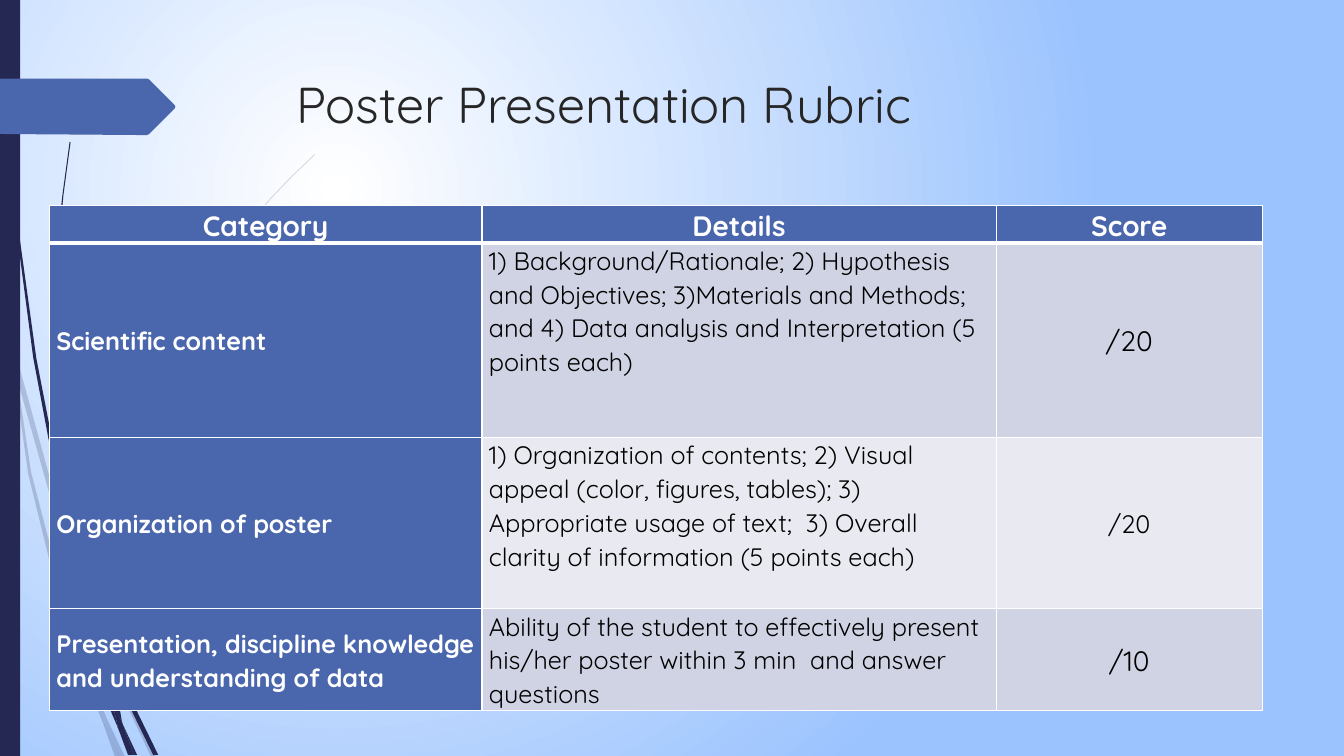
from dataclasses import dataclass

from lxml.etree import SubElement
from pptx import Presentation
from pptx.dml.color import RGBColor
from pptx.enum.shapes import MSO_SHAPE
from pptx.enum.text import MSO_ANCHOR as Anchor, PP_ALIGN as Align
from pptx.oxml.ns import qn
from pptx.util import Emu, Pt

PX = 9144
FONT = "Quicksand"
COLORS = {
    "navy": "242852",
    "blue": "4A66AC",
    "sky": "9BC3FE",
    "white": "FFFFFF",
    "black": "000000",
    "title": "262626",
    "band_dark": "D0D3E3",
    "band_light": "E9EAF1",
}

Points = list[tuple[int, int]]


@dataclass
class Outline:
    points: Points
    color: str = "navy"
    opacity: int = 100


@dataclass
class Entry:
    text: str
    fill: str
    color: str = "black"
    size: int = 18
    bold: bool = False
    align: Align = Align.LEFT
    anchor: Anchor = Anchor.MIDDLE


@dataclass
class Criterion:
    category: str
    details: str
    score: str
    score_size: int
    band: str


FADED_WISPS: list[Points] = [
    [(11, 350), (9, 322), (0, 282), (0, 299), (10, 344)],
    [(58, 522), (84, 599), (85, 586), (62, 520), (14, 345), (17, 376)],
    [(92, 607), (88, 596), (88, 610), (123, 694), (150, 751), (155, 751), (127, 692)],
    [(119, 751), (124, 751), (105, 711)],
    [(93, 683), (70, 619), (31, 469), (17, 376), (11, 350), (28, 470), (65, 621),
     (92, 693), (101, 714), (99, 707)],
    [(84, 599), (87, 646), (93, 683), (96, 692), (105, 711), (103, 706), (91, 646),
     (88, 610), (88, 608)],
    [(88, 584), (94, 521), (110, 462), (160, 349), (229, 245), (268, 198), (290, 175),
     (312, 154), (312, 153), (289, 175), (268, 197), (228, 244), (158, 348),
     (107, 461), (90, 521), (85, 584), (85, 586), (88, 596)],
    [(101, 714), (114, 751), (119, 751)],
    [(88, 608), (88, 610), (88, 596), (85, 586), (84, 599)],
    [(96, 692), (93, 683), (99, 707), (101, 714), (119, 751), (105, 711)],
]
DARK_WISPS: list[Points] = [
    [(7, 110), (17, 233), (33, 355), (56, 477), (57, 481), (55, 457), (55, 453),
     (36, 355), (19, 232), (8, 109), (5, 48), (4, 0), (3, 0), (4, 48)],
    [(88, 592), (106, 645), (106, 633), (106, 631), (93, 590), (60, 472), (64, 505)],
    [(113, 649), (110, 641), (111, 656), (132, 708), (152, 749), (157, 749), (136, 706)],
    [(110, 691), (98, 657), (72, 556), (64, 505), (57, 477), (68, 557), (93, 659),
     (111, 708), (117, 722), (116, 717)],
    [(60, 472), (58, 453), (54, 349), (58, 245), (63, 193), (70, 141), (69, 141),
     (62, 193), (56, 245), (52, 349), (55, 449)],
    [(133, 749), (136, 749), (122, 719)],
    [(57, 477), (64, 505), (60, 472), (55, 449), (55, 453)],
    [(111, 633), (125, 552), (158, 476), (205, 406), (231, 374), (245, 359), (261, 344),
     (260, 344), (245, 358), (231, 373), (204, 405), (156, 474), (122, 551),
     (106, 631), (110, 641)],
    [(117, 722), (127, 749), (131, 749)],
    [(106, 645), (110, 691), (116, 706), (122, 719), (121, 716), (111, 656), (109, 651)],
    [(106, 645), (109, 651), (111, 656), (110, 641), (106, 631), (106, 633)],
    [(116, 706), (110, 691), (116, 717), (117, 722), (130, 749), (133, 749), (122, 719)],
]
ARROW: Points = [(173, 108), (148, 133), (146, 134), (136, 134), (0, 133), (0, 78),
                 (146, 78), (148, 79), (173, 104), (174, 106)]

CRITERIA = [
    Criterion("Scientific content",
              "1) Background/Rationale; 2) Hypothesis and Objectives; 3)Materials and Methods; "
              "and 4) Data analysis and Interpretation (5 points each)",
              "/20", 20, "band_dark"),
    Criterion("Organization of poster",
              "1) Organization of contents; 2) Visual appeal (color, figures, tables); "
              "3) Appropriate usage of text;  3) Overall clarity of information (5 points each)",
              "/20", 18, "band_light"),
    Criterion("Presentation, discipline knowledge and understanding of data",
              "Ability of the student to effectively present his/her poster within 3 min  "
              "and answer questions",
              "/10", 20, "band_dark"),
]
COLUMN_WIDTHS = [429, 510, 264]
ROW_HEIGHTS = [37, 193, 170, 101]


def px(length: int) -> Emu:
    return Emu(length * PX)


def rgb(name: str) -> RGBColor:
    return RGBColor.from_string(COLORS[name])


def paint_background(page) -> None:
    fill = page.background.fill
    fill.gradient()
    for stop, name in zip(fill.gradient_stops, ("white", "sky")):
        stop.color.rgb = rgb(name)
    gradient = page.element.find(".//" + qn("a:gradFill"))
    gradient.remove(gradient.find(qn("a:lin")))
    circle = SubElement(gradient, qn("a:path"), {"path": "circle"})
    SubElement(circle, qn("a:fillToRect"),
               {"l": "50000", "t": "50000", "r": "100000", "b": "100000"})


def paint_shape(shape, color: str, opacity: int = 100) -> None:
    shape.shadow.inherit = False
    shape.fill.solid()
    shape.fill.fore_color.rgb = rgb(color)
    shape.line.fill.background()
    if opacity < 100:
        tone = shape.element.spPr.find(".//" + qn("a:srgbClr"))
        SubElement(tone, qn("a:alpha"), {"val": str(opacity * 1000)})


def draw_outline(page, outline: Outline) -> None:
    start, *rest = outline.points
    builder = page.shapes.build_freeform(*start, scale=PX)
    builder.add_line_segments(rest, close=True)
    paint_shape(builder.convert_to_shape(), outline.color, outline.opacity)


def add_span(para, text: str, size: int, color: str, bold: bool = False) -> None:
    span = para.add_run()
    span.text = text
    span.font.name = FONT
    span.font.size = Pt(size)
    span.font.bold = bold
    span.font.color.rgb = rgb(color)


def draw_title(page) -> None:
    box = page.shapes.add_textbox(px(284), px(68), px(975), px(140))
    box.text_frame.word_wrap = True
    add_span(box.text_frame.paragraphs[0], "Poster Presentation Rubric", 36, "title")


def add_border(cell, side: str, points: int) -> None:
    border = SubElement(cell._tc.get_or_add_tcPr(), qn("a:" + side), {"w": str(Pt(points))})
    solid = SubElement(border, qn("a:solidFill"))
    SubElement(solid, qn("a:srgbClr"), {"val": COLORS["white"]})


def fill_cell(cell, entry: Entry, row: int) -> None:
    for side in ("lnL", "lnR", "lnT", "lnB"):
        under_header = (row, side) in ((0, "lnB"), (1, "lnT"))
        add_border(cell, side, 3 if under_header else 1)
    cell.fill.solid()
    cell.fill.fore_color.rgb = rgb(entry.fill)
    cell.margin_left = cell.margin_right = px(7)
    cell.margin_top = cell.margin_bottom = 0
    cell.vertical_anchor = entry.anchor
    para = cell.text_frame.paragraphs[0]
    para.alignment = entry.align
    para.line_spacing = 1.07
    add_span(para, entry.text, entry.size, entry.color, entry.bold)


def draw_rubric(page) -> None:
    rows = [[Entry(name, "blue", "white", 20, True, Align.CENTER, Anchor.TOP)
             for name in ("Category", "Details", "Score")]]
    rows += [[Entry(item.category, "blue", "white", bold=True),
              Entry(item.details, item.band, anchor=Anchor.TOP),
              Entry(item.score, item.band, size=item.score_size, align=Align.CENTER)]
             for item in CRITERIA]
    table = page.shapes.add_table(len(rows), len(COLUMN_WIDTHS), px(49), px(204),
                                  px(sum(COLUMN_WIDTHS)), px(sum(ROW_HEIGHTS))).table
    for column, width in zip(table.columns, COLUMN_WIDTHS):
        column.width = px(width)
    for row, (entries, height) in enumerate(zip(rows, ROW_HEIGHTS)):
        table.rows[row].height = px(height)
        for column, entry in enumerate(entries):
            fill_cell(table.cell(row, column), entry, row)


def main() -> None:
    deck = Presentation()
    deck.slide_width, deck.slide_height = px(1333), px(750)
    page = deck.slides.add_slide(deck.slide_layouts[6])
    paint_background(page)
    for points in FADED_WISPS:
        draw_outline(page, Outline(points, opacity=20))
    for points in DARK_WISPS:
        draw_outline(page, Outline(points))
    paint_shape(page.shapes.add_shape(MSO_SHAPE.RECTANGLE, 0, 0, px(20), px(750)), "navy")
    draw_outline(page, Outline(ARROW, "blue"))
    draw_title(page)
    draw_rubric(page)
    deck.save("out.pptx")


if __name__ == "__main__":
    main()
